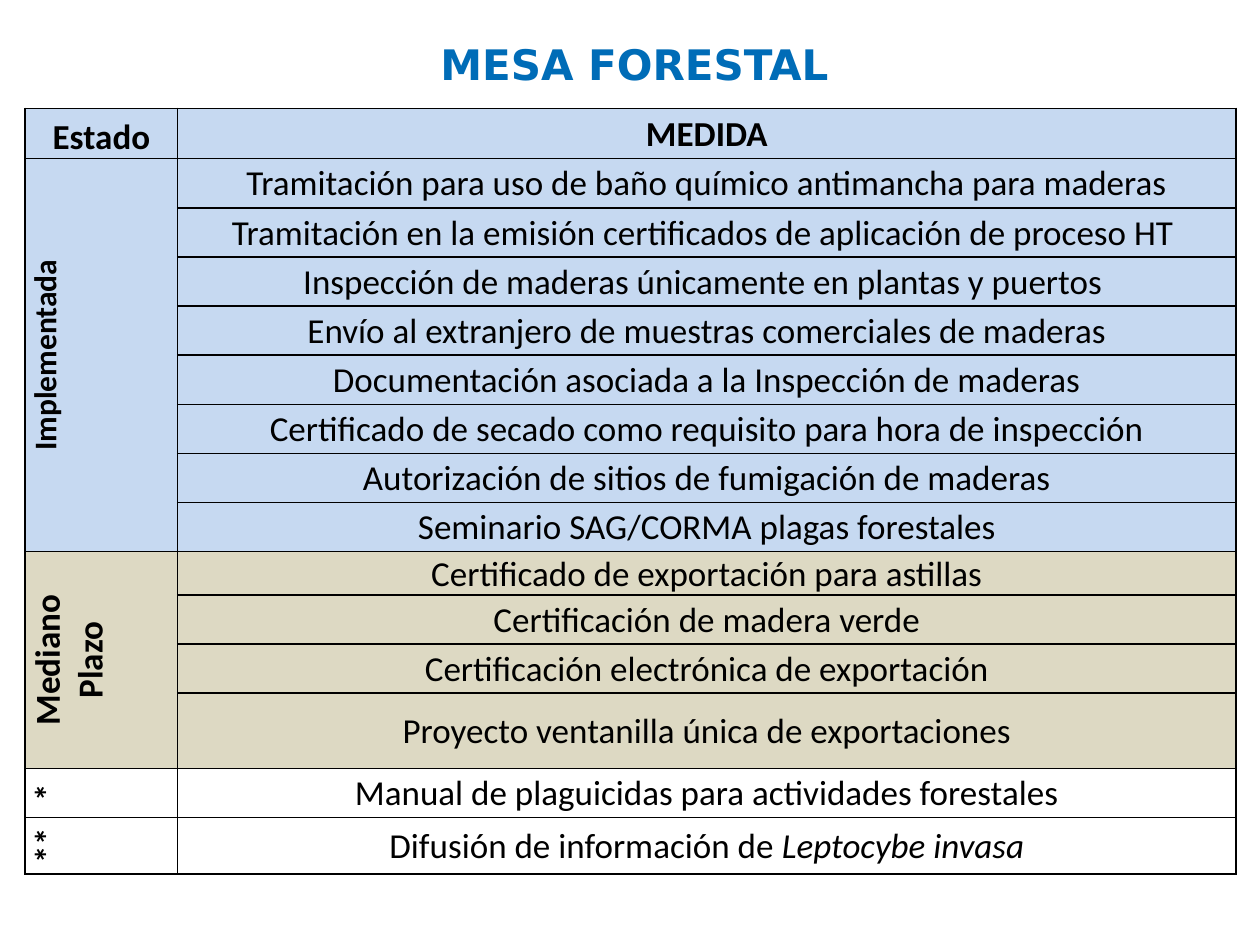
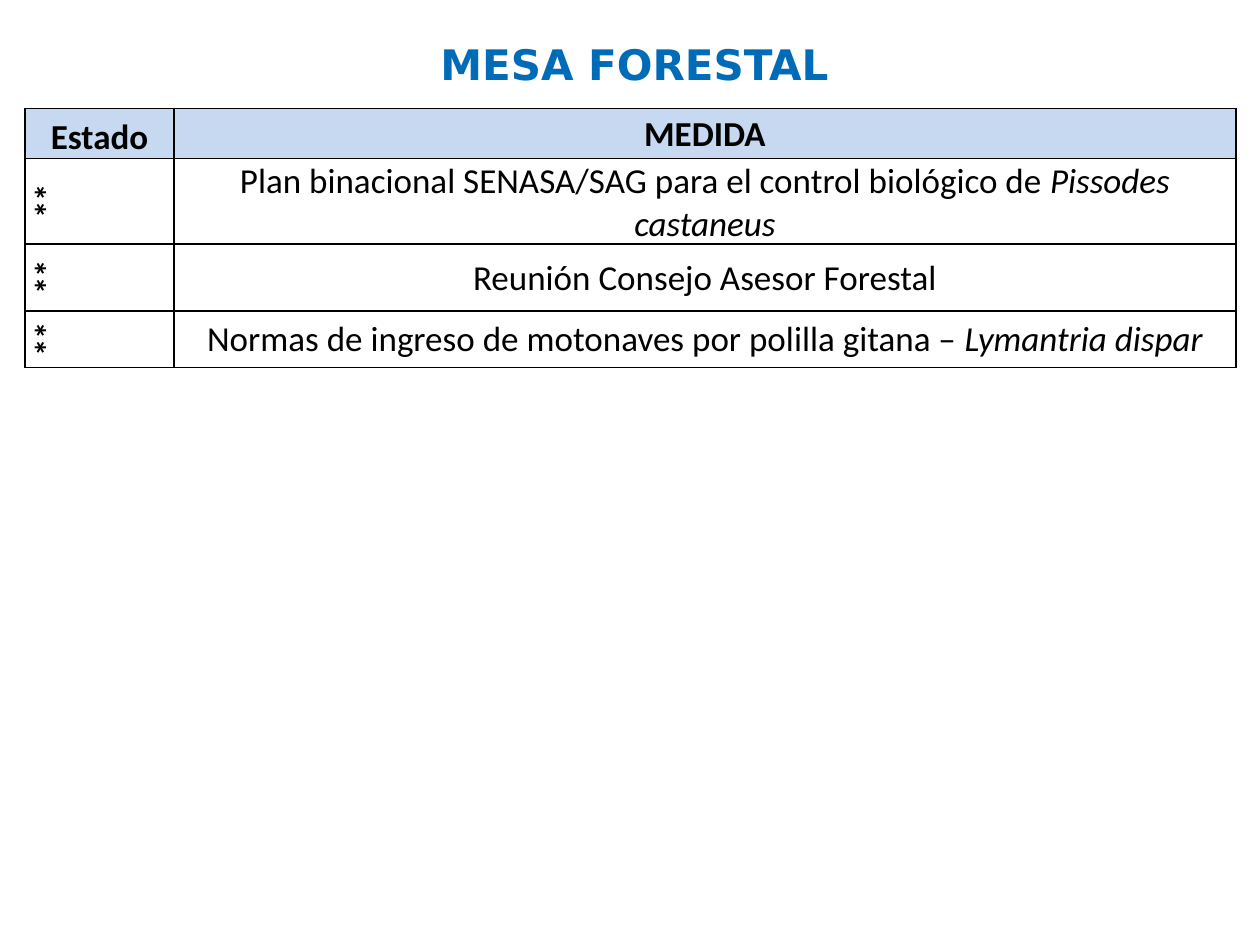
"""Builds the two MESA FORESTAL slides: measures grouped by their state."""
from lxml import etree
from pptx import Presentation
from pptx.dml.color import RGBColor
from pptx.enum.text import MSO_ANCHOR, PP_ALIGN
from pptx.oxml.ns import qn
from pptx.util import Inches, Pt

CENTER = PP_ALIGN.CENTER
MIDDLE, BOTTOM = MSO_ANCHOR.MIDDLE, MSO_ANCHOR.BOTTOM

TITLE = "MESA FORESTAL"
HEADER = ("Estado", "MEDIDA")
HEADER_HEIGHT, ROW_HEIGHT = 0.4, 0.39
BLUE, SAND, WHITE = "C6D9F1", "DDD9C3", "FFFFFF"
TITLE_COLOR, BLACK = "006CB7", "000000"
TITLE_FONT, TABLE_FONT = "DejaVu Sans", "Calibri"

# Each measure is (plain text, italic text, row height).
SLIDES = [
    {"columns": (1.21, 8.4), "groups": [
        ("Implementada", 18, BLUE, [
            ("Tramitación para uso de baño químico antimancha para maderas", "", ROW_HEIGHT),
            ("Tramitación en la emisión certificados de aplicación de proceso HT ", "", ROW_HEIGHT),
            ("Inspección de maderas únicamente en plantas y puertos ", "", ROW_HEIGHT),
            ("Envío al extranjero de muestras comerciales de maderas", "", ROW_HEIGHT),
            ("Documentación asociada a la Inspección de maderas", "", ROW_HEIGHT),
            ("Certificado de secado como requisito para hora de inspección", "", ROW_HEIGHT),
            ("Autorización de sitios de fumigación de maderas", "", ROW_HEIGHT),
            ("Seminario SAG/CORMA plagas forestales", "", ROW_HEIGHT),
        ]),
        ("Mediano Plazo", 20, SAND, [
            ("Certificado de exportación para astillas", "", 0.31),
            ("Certificación de madera verde", "", ROW_HEIGHT),
            ("Certificación electrónica de exportación", "", ROW_HEIGHT),
            ("Proyecto ventanilla única de exportaciones", "", ROW_HEIGHT),
        ]),
        ("*", 20, WHITE, [("Manual de plaguicidas para actividades forestales", "", ROW_HEIGHT)]),
        ("**", 20, WHITE, [("Difusión de información de ", "Leptocybe invasa", 0.45)]),
    ]},
    {"columns": (1.18, 8.43), "groups": [
        ("**", 20, WHITE, [("Plan binacional SENASA/SAG para el control biológico de ",
                            "Pissodes castaneus", ROW_HEIGHT)]),
        ("**", 20, WHITE, [("Reunión Consejo Asesor Forestal", "", 0.53)]),
        ("**", 20, WHITE, [("Normas de ingreso de motonaves por polilla gitana – ",
                            "Lymantria dispar", 0.45)]),
    ]},
]


def rgb(color):
    return RGBColor.from_string(color)


def style_run(run, font, size, color, bold=False, italic=False):
    run.font.name = font
    run.font.size = Pt(size)
    run.font.color.rgb = rgb(color)
    run.font.bold = bold
    run.font.italic = italic


def add_title(slide):
    title = slide.shapes.add_textbox(Inches(0.94), Inches(0.23), Inches(8.19), Inches(0.59))
    frame = title.text_frame
    frame.word_wrap = True
    frame.vertical_anchor = MIDDLE
    frame.margin_bottom = Inches(0.09)
    frame.text = TITLE
    frame.paragraphs[0].alignment = CENTER
    style_run(frame.paragraphs[0].runs[0], TITLE_FONT, 24, TITLE_COLOR, bold=True)


def frame_cell(cell, fill):
    cell.margin_left = cell.margin_right = cell.margin_top = Inches(0.01)
    cell.margin_bottom = 0
    cell.vertical_anchor = MIDDLE
    properties = cell._tc.get_or_add_tcPr()
    for side in ("a:lnL", "a:lnR", "a:lnT", "a:lnB"):
        border = etree.SubElement(properties, qn(side), w=str(Pt(1)))
        solid = etree.SubElement(border, qn("a:solidFill"))
        etree.SubElement(solid, qn("a:srgbClr"), val=BLACK)
    cell.fill.solid()
    cell.fill.fore_color.rgb = rgb(fill)


def write_cell(cell, text, size=20, bold=False, italic_text=""):
    cell.text_frame.text = text
    paragraph = cell.text_frame.paragraphs[0]
    paragraph.alignment = CENTER
    style_run(paragraph.runs[0], TABLE_FONT, size, BLACK, bold)
    if italic_text:
        species = paragraph.add_run()
        species.text = italic_text
        style_run(species, TABLE_FONT, size, BLACK, bold, italic=True)


def add_measures(slide, columns, groups):
    heights = [HEADER_HEIGHT] + [height for *_, measures in groups for *_, height in measures]
    table = slide.shapes.add_table(
        len(heights), len(columns), Inches(0.2), Inches(0.86),
        Inches(sum(columns)), Inches(sum(heights))).table
    table.first_row = table.horz_banding = False
    for column, width in zip(table.columns, columns):
        column.width = Inches(width)
    for row, height in zip(table.rows, heights):
        row.height = Inches(height)

    fills = [BLUE] + [fill for _, _, fill, measures in groups for _ in measures]
    for row, fill in zip(table.rows, fills):
        for cell in row.cells:
            frame_cell(cell, fill)

    for index, heading in enumerate(HEADER):
        write_cell(table.cell(0, index), heading, bold=True)
    table.cell(0, 0).vertical_anchor = BOTTOM

    first = 1
    for state, size, _, measures in groups:
        state_cell = table.cell(first, 0)
        if len(measures) > 1:
            state_cell.merge(table.cell(first + len(measures) - 1, 0))
        write_cell(state_cell, state, size, bold=True)
        state_cell._tc.get_or_add_tcPr().set("vert", "vert270")
        for offset, (text, species, _) in enumerate(measures):
            write_cell(table.cell(first + offset, 1), text, italic_text=species)
        first += len(measures)


def main():
    deck = Presentation()
    deck.slide_width, deck.slide_height = Inches(10), Inches(7.5)
    for content in SLIDES:
        slide = deck.slides.add_slide(deck.slide_layouts[6])
        add_title(slide)
        add_measures(slide, **content)
    deck.save("out.pptx")


if __name__ == "__main__":
    main()
